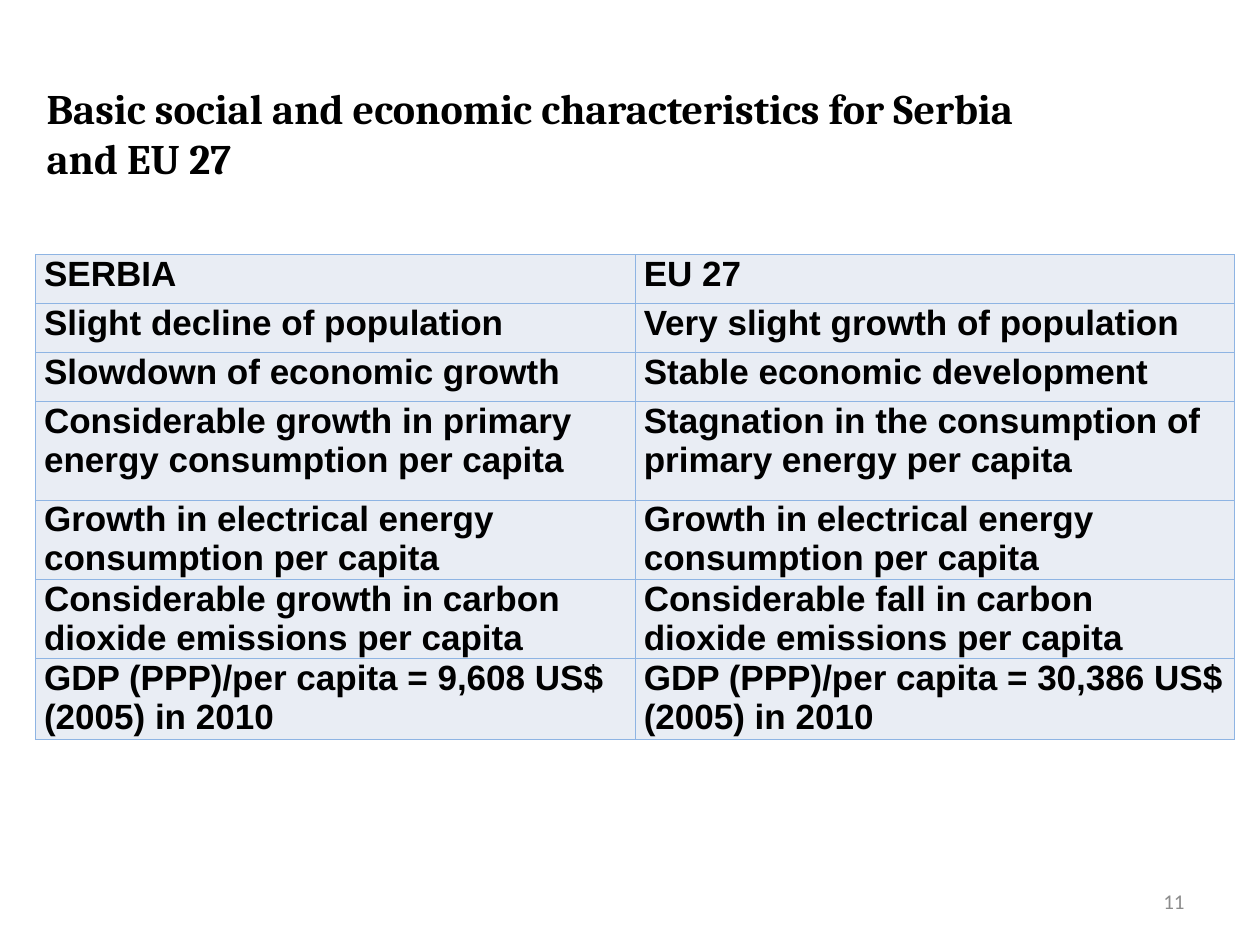
from lxml.etree import SubElement
from pptx import Presentation
from pptx.dml.color import RGBColor
from pptx.enum.text import MSO_ANCHOR, PP_ALIGN
from pptx.oxml.ns import qn
from pptx.util import Inches, Pt

TITLE = "Basic social and economic characteristics for Serbia and EU 27"
PAGE_NUMBER = "11"
ROWS = [
    (0.39, "SERBIA", "EU 27"),
    (0.39, "Slight decline of population", "Very slight growth of population"),
    (0.39, "Slowdown of economic growth", "Stable economic development"),
    (0.78, "Considerable growth in primary energy consumption per capita",
     "Stagnation in the consumption of primary energy per capita"),
    (0.63, "Growth in electrical energy consumption per capita",
     "Growth in electrical energy consumption per capita"),
    (0.63, "Considerable growth in carbon dioxide emissions per capita",
     "Considerable fall in carbon dioxide emissions per capita"),
    (0.64, "GDP (PPP)/per capita = 9,608 US$ (2005) in 2010",
     "GDP (PPP)/per capita = 30,386 US$ (2005) in 2010"),
]
COLUMN_WIDTH = 4.76

BLACK = RGBColor(0x00, 0x00, 0x00)
GRAY = RGBColor(0x8C, 0x8C, 0x8C)
CELL_FILL = RGBColor(0xE9, 0xED, 0xF4)
BORDER = RGBColor(0x8E, 0xB4, 0xE3)


def write(text_frame, text, font, size, color, bold=False, align=PP_ALIGN.LEFT):
    paragraph = text_frame.paragraphs[0]
    paragraph.alignment = align
    run = paragraph.add_run()
    run.text = text
    run.font.name = font
    run.font.size = Pt(size)
    run.font.bold = bold
    run.font.color.rgb = color


def add_borders(cell):
    properties = cell._tc.get_or_add_tcPr()
    for side in ("a:lnL", "a:lnR", "a:lnT", "a:lnB"):
        line = SubElement(properties, qn(side), w=str(Pt(0.5)))
        fill = SubElement(line, qn("a:solidFill"))
        SubElement(fill, qn("a:srgbClr"), val=str(BORDER))


def format_cell(cell, text):
    add_borders(cell)
    cell.fill.solid()
    cell.fill.fore_color.rgb = CELL_FILL
    cell.margin_left = cell.margin_right = Inches(0.07)
    cell.margin_top = cell.margin_bottom = 0
    write(cell.text_frame, text, "Arial", 20, BLACK, bold=True)


def add_comparison_table(slide):
    height = sum(row[0] for row in ROWS)
    table = slide.shapes.add_table(
        len(ROWS), 2, Inches(0.28), Inches(2.02),
        Inches(2 * COLUMN_WIDTH), Inches(height)).table
    for column in table.columns:
        column.width = Inches(COLUMN_WIDTH)
    for row, (row_height, *texts) in zip(table.rows, ROWS):
        row.height = Inches(row_height)
        for cell, text in zip(row.cells, texts):
            format_cell(cell, text)


def add_title(slide):
    title = slide.shapes.title
    title.left, title.top = Inches(0.27), Inches(0.6)
    title.width, title.height = Inches(8.35), Inches(0.91)
    title.text_frame.word_wrap = True
    title.text_frame.vertical_anchor = MSO_ANCHOR.MIDDLE
    write(title.text_frame, TITLE, "Cambria", 24, BLACK, bold=True)


def add_page_number(slide):
    box = slide.shapes.add_textbox(
        Inches(7.17), Inches(6.95), Inches(2.33), Inches(0.4))
    box.text_frame.word_wrap = True
    box.text_frame.vertical_anchor = MSO_ANCHOR.MIDDLE
    write(box.text_frame, PAGE_NUMBER, "Calibri", 12, GRAY, align=PP_ALIGN.RIGHT)


def main():
    presentation = Presentation()
    presentation.slide_width, presentation.slide_height = Inches(10), Inches(7.5)
    slide = presentation.slides.add_slide(presentation.slide_layouts[5])
    add_title(slide)
    add_comparison_table(slide)
    add_page_number(slide)
    presentation.save("out.pptx")


if __name__ == "__main__":
    main()
